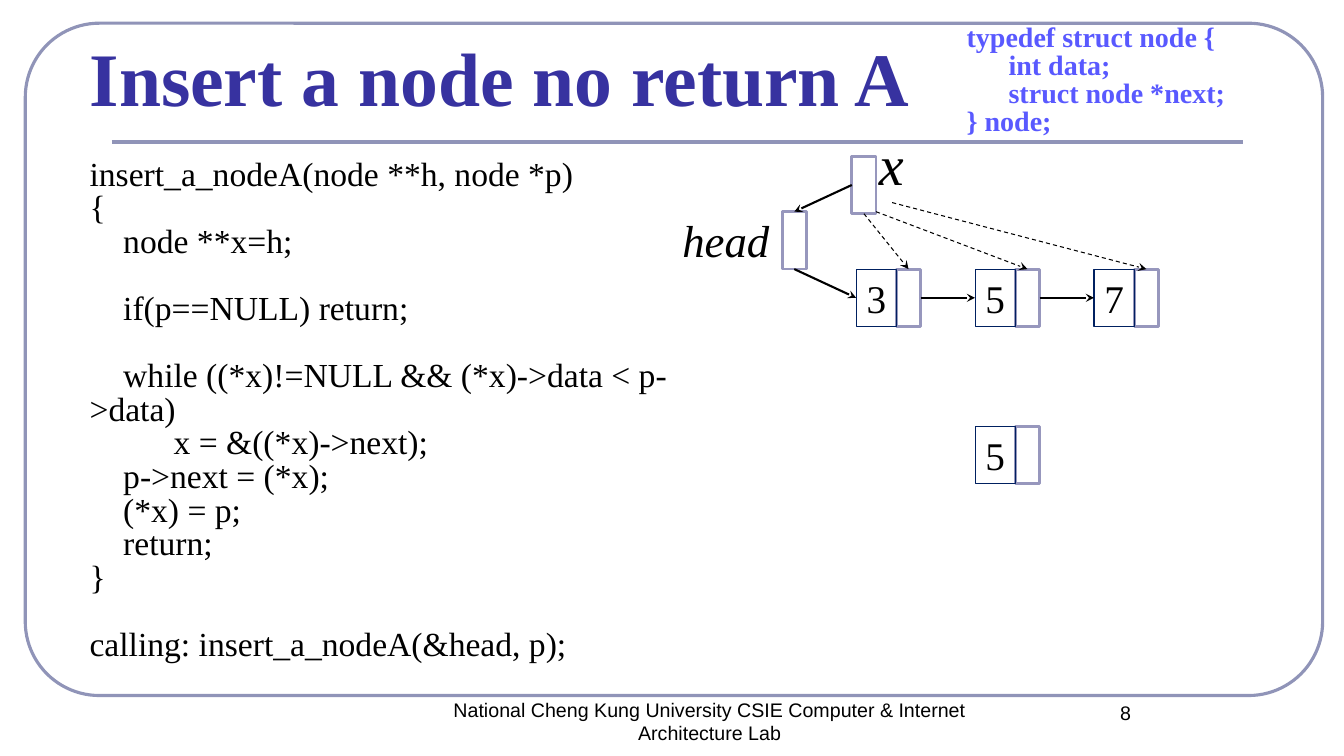
from lxml import etree
from pptx import Presentation
from pptx.dml.color import RGBColor
from pptx.enum.dml import MSO_LINE
from pptx.enum.shapes import MSO_CONNECTOR, MSO_SHAPE
from pptx.enum.text import MSO_ANCHOR, PP_ALIGN
from pptx.oxml.ns import qn
from pptx.util import Inches, Pt

STRAIGHT = MSO_CONNECTOR.STRAIGHT
RECTANGLE, ROUNDED = MSO_SHAPE.RECTANGLE, MSO_SHAPE.ROUNDED_RECTANGLE
DASH = MSO_LINE.DASH
TOP, MIDDLE, BOTTOM = MSO_ANCHOR.TOP, MSO_ANCHOR.MIDDLE, MSO_ANCHOR.BOTTOM
LEFT, CENTER = PP_ALIGN.LEFT, PP_ALIGN.CENTER
SIDE_TOP, SIDE_LEFT, SIDE_BOTTOM, SIDE_RIGHT = range(4)

BLACK = RGBColor(0x00, 0x00, 0x00)
FRAME_GREY = RGBColor(0x90, 0x94, 0xB8)
POINTER_GREY = RGBColor(0x97, 0x97, 0xBD)
NAVY = RGBColor(0x00, 0x20, 0x60)
TITLE_BLUE = RGBColor(0x37, 0x32, 0xA0)
TYPE_BLUE = RGBColor(0x59, 0x59, 0xFF)
SERIF, SANS = "Times New Roman", "Arial"

# Node geometry, in percent of the slide's width and height
DATA_WIDTH, POINTER_WIDTH, CELL_HEIGHT = 3, 1.8, 7.6
FIRST_NODE, NODE_PITCH, LIST_TOP, NEW_NODE_TOP = 63.7, 8.85, 35.6, 56.4

# Code lines: text, first-line indent in points, space before in points
CODE = [
    ("insert_a_nodeA(node **h, node *p)", 0, 0),
    ("{", 0, 0),
    ("node **x=h;", 24, 0),
    ("if(p==NULL) return;", 24, 24),
    ("while ((*x)!=NULL && (*x)->data < p->data)", 24, 24),
    ("x = &((*x)->next);", 60, 0),
    ("p->next = (*x);", 24, 0),
    ("(*x) = p;", 24, 0),
    ("return;", 24, 0),
    ("}", 0, 0),
    ("calling: insert_a_nodeA(&head, p);", 0, 24),
]
TYPE_DEFINITION = [
    ("typedef struct node {", 0, 0),
    ("int data;", 30, 0),
    ("struct node *next;", 30, 0),
    ("} node;", 0, 0),
]


def write_text(shape, text, size=24, font=SERIF, color=BLACK, bold=False, italic=False,
               align=LEFT, anchor=TOP, wrap=True, spacing=None):
    """Fill a shape with one string or with (text, indent, space before) lines."""
    frame = shape.text_frame
    frame.word_wrap = wrap
    frame.vertical_anchor = anchor
    lines = [(text, 0, 0)] if isinstance(text, str) else text
    for index, (line, indent, before) in enumerate(lines):
        paragraph = frame.add_paragraph() if index else frame.paragraphs[0]
        paragraph.alignment = align
        paragraph.space_before = Pt(before)
        if spacing:
            paragraph.line_spacing = Pt(spacing)
        if indent:
            paragraph._p.get_or_add_pPr().set("indent", str(Pt(indent)))
        run = paragraph.add_run()
        run.text = line
        run.font.name, run.font.size = font, Pt(size)
        run.font.bold, run.font.italic = bold, italic
        run.font.color.rgb = color


class SlideBuilder:
    """Places elements by percent of the slide's width and height."""

    def __init__(self, presentation):
        self.width = presentation.slide_width
        self.height = presentation.slide_height
        self.slide = presentation.slides.add_slide(presentation.slide_layouts[6])

    def place(self, *shares):
        """Turn alternating horizontal and vertical percentages into lengths."""
        return [round(share * (self.height if index % 2 else self.width) / 100)
                for index, share in enumerate(shares)]

    def text(self, box, text, **style):
        shape = self.slide.shapes.add_textbox(*self.place(*box))
        write_text(shape, text, **style)

    def outline(self, box, color, weight, kind=RECTANGLE):
        shape = self.slide.shapes.add_shape(kind, *self.place(*box))
        shape.shadow.inherit = False
        shape.fill.background()
        shape.line.color.rgb = color
        shape.line.width = Pt(weight)
        return shape

    def pointer(self, left, top):
        return self.outline((left, top, POINTER_WIDTH, CELL_HEIGHT), POINTER_GREY, 2)

    def node(self, left, top, value):
        """Draw a data cell with its next pointer and return both."""
        next_pointer = self.pointer(left + DATA_WIDTH, top)
        data = self.outline((left, top, DATA_WIDTH, CELL_HEIGHT), NAVY, 0.75)
        write_text(data, value, size=28, align=CENTER, anchor=MIDDLE, wrap=False)
        return data, next_pointer

    def line(self, start, end, color=BLACK, weight=1.5):
        connector = self.slide.shapes.add_connector(STRAIGHT, *self.place(*start, *end))
        connector.line.color.rgb = color
        connector.line.width = Pt(weight)
        etree.SubElement(connector._element.spPr, qn("a:effectLst"))
        return connector

    def arrow(self, target, target_side, source=None, source_side=None,
              start=(0, 0), dashed=False):
        """Point at a side of a shape, from another shape's side or a free point."""
        connector = self.line(start, start, weight=0.75 if dashed else 1.5)
        if source is not None:
            connector.begin_connect(source, source_side)
        connector.end_connect(target, target_side)
        if dashed:
            connector.line.dash_style = DASH
        etree.SubElement(connector.line._get_or_add_ln(), qn("a:tailEnd"), type="stealth")


def main():
    presentation = Presentation()
    presentation.slide_width, presentation.slide_height = Inches(13.33), Inches(7.5)
    builder = SlideBuilder(presentation)

    # Frame, title and footer
    frame = builder.outline((1.88, 3.07, 96.53, 88.93), FRAME_GREY, 2.25, ROUNDED)
    frame.adjustments[0] = 0.11
    builder.line((8.33, 18.8), (92.5, 18.8), FRAME_GREY, 3)
    builder.text((5.93, 8.13, 66.1, 8.67), "Insert a node no return A",
                 size=54, color=TITLE_BLUE, bold=True, anchor=BOTTOM)
    builder.text((31.13, 91.6, 43.35, 6.67),
                 "National Cheng Kung University CSIE Computer & Internet Architecture Lab",
                 size=14, font=SANS, align=CENTER)
    builder.text((75, 92, 17.5, 6.67), "8", size=14, font=SANS, align=CENTER)

    # Code
    builder.text((5.93, 20.4, 50.25, 64.13), CODE, spacing=24)
    builder.text((71.18, 2.67, 22.13, 16.27), TYPE_DEFINITION,
                 size=20, color=TYPE_BLUE, bold=True, spacing=20)

    # Linked list and the node to insert
    nodes = [builder.node(FIRST_NODE + index * NODE_PITCH, LIST_TOP, value)
             for index, value in enumerate("357")]
    builder.node(FIRST_NODE + NODE_PITCH, NEW_NODE_TOP, "5")

    # Pointers head and x
    head = builder.pointer(58.2, 28)
    cursor = builder.pointer(63.38, 20.67)
    builder.text((50.03, 27.47, 8.33, 8.53), "head", size=32, italic=True)
    builder.text((64.65, 16.53, 3.38, 10.27), "x", size=40, italic=True, wrap=False)

    # Solid links
    builder.arrow(head, SIDE_TOP, cursor, SIDE_LEFT)
    builder.arrow(nodes[0][0], SIDE_LEFT, head, SIDE_BOTTOM)
    for (_, next_pointer), (data, _) in zip(nodes, nodes[1:]):
        builder.arrow(data, SIDE_LEFT, next_pointer, SIDE_RIGHT)

    # Dashed steps of x along the list
    builder.arrow(nodes[0][1], SIDE_TOP, cursor, SIDE_BOTTOM, dashed=True)
    for (_, next_pointer), start in zip(nodes[1:], [(65.18, 28), (66.38, 26.8)]):
        builder.arrow(next_pointer, SIDE_TOP, start=start, dashed=True)

    presentation.save("out.pptx")


if __name__ == "__main__":
    main()
